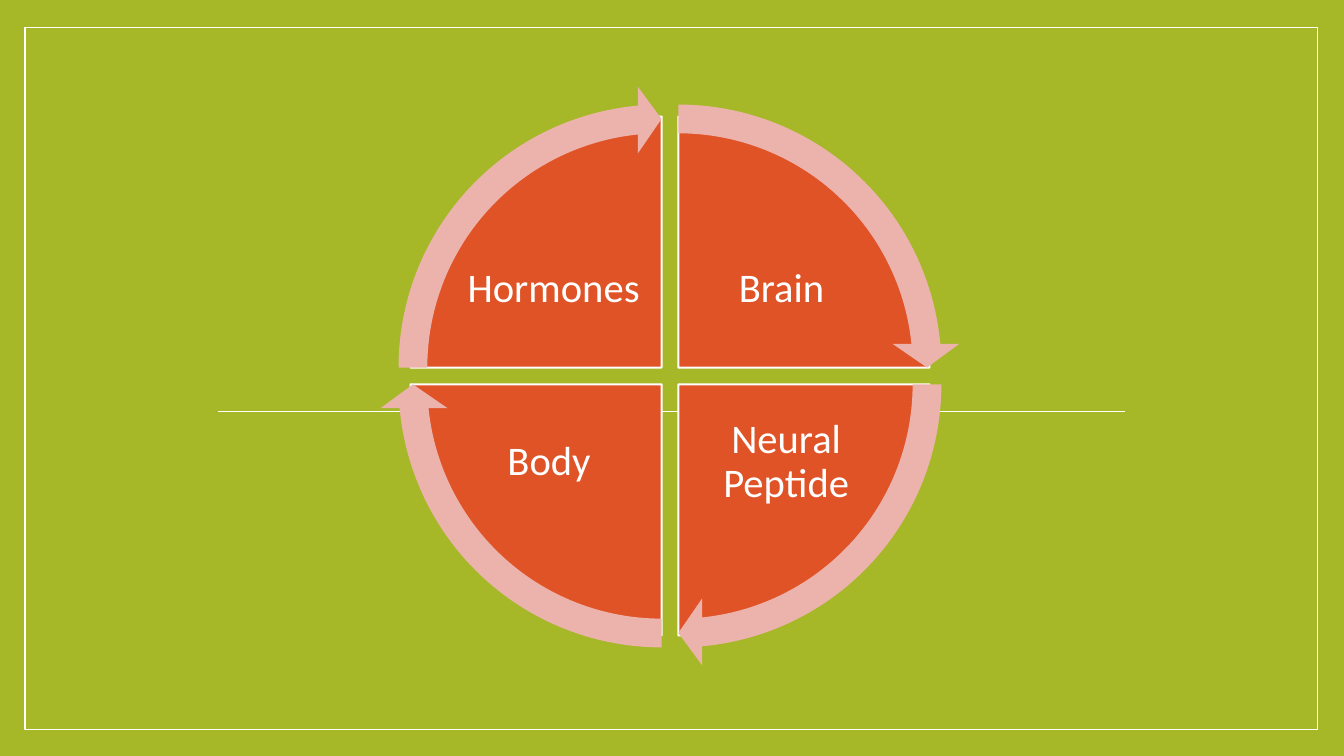
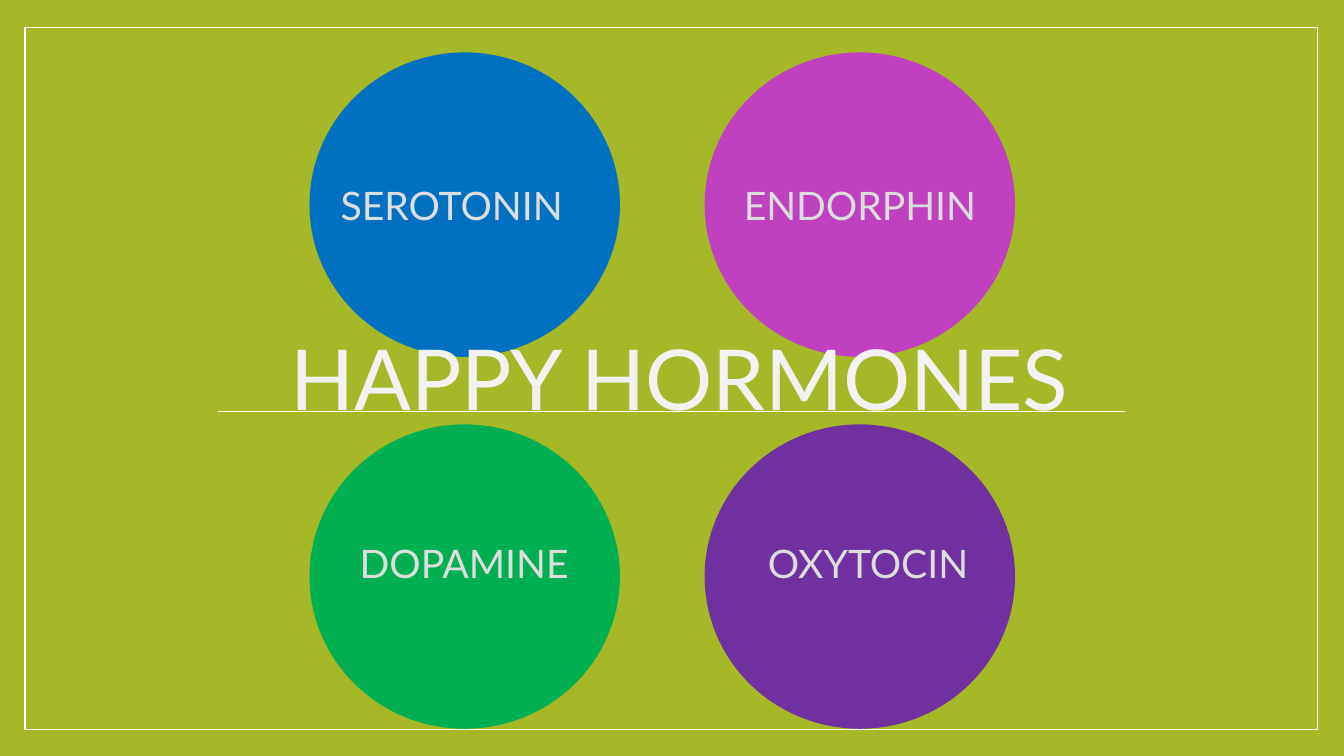
"""Build two slides: a four-part hormone cycle and the four happy hormones."""
import pptx
import pptx.util
import pptx.dml.color
import pptx.enum.shapes
import pptx.enum.text
import pptx.oxml.ns
import lxml.etree

SHAPE = pptx.enum.shapes.MSO_SHAPE
PP = pptx.enum.text.PP_ALIGN
ANCHOR = pptx.enum.text.MSO_ANCHOR
FIT = pptx.enum.text.MSO_AUTO_SIZE
RGB = pptx.dml.color.RGBColor.from_string
Pt = pptx.util.Pt

C = {
    "lime": "A6B727", "white": "FFFFFF", "orange": "DF5327", "pink": "ECB3AD",
    "blue": "0070C0", "magenta": "BF41BF", "green": "00B050", "purple": "7030A0",
    "title": "F2F2F2", "label": "DDDDDD",
}

prs = pptx.Presentation()
prs.slide_width = pptx.util.Inches(13.333)
prs.slide_height = pptx.util.Inches(7.5)
CELL = prs.slide_width / 40


def shape(s, kind, x, y, w, h, fill, line=None, adj=()):
    sp = s.shapes.add_shape(kind, *(int(v * CELL) for v in (x, y, w, h)))
    sp.shadow.inherit = False
    sp.fill.solid()
    sp.fill.fore_color.rgb = RGB(C[fill])
    if line:
        sp.line.color.rgb = RGB(C["white"])
        sp.line.width = Pt(line)
    else:
        sp.line.fill.background()
    for i, v in enumerate(adj):
        sp.adjustments[i] = v


def text(s, x, y, w, h, words, color, font, frame, para):
    tf = s.shapes.add_textbox(*(int(v * CELL) for v in (x, y, w, h))).text_frame
    p = tf.paragraphs[0]
    r = p.add_run()
    r.text = words
    r.font.color.rgb = RGB(C[color])
    for obj, fmt in ((tf, frame), (p, para), (r.font, font)):
        for name, value in fmt.items():
            setattr(obj, name, value)


bg = prs.slide_master.background.fill
bg.solid()
bg.fore_color.rgb = RGB(C["lime"])

slides = [prs.slides.add_slide(prs.slide_layouts[6]) for _ in range(2)]
for s in slides:
    shape(s, SHAPE.RECTANGLE, 0.75, 0.81, 38.46, 20.91, "lime", 1)
    ln = s.shapes.add_connector(
        pptx.enum.shapes.MSO_CONNECTOR.STRAIGHT,
        *(int(v * CELL) for v in (6.48, 12.24, 33.48, 12.24)))
    ln.line.color.rgb = RGB(C["white"])
    ln.line.width = Pt(0.79)
    lxml.etree.SubElement(ln.element.spPr, pptx.oxml.ns.qn("a:effectLst"))

cycle, happy = slides

MID_X, MID_Y, GAP = 19.94, 11.19, 0.25
PIE, ARROW = 14.94, 16.78
TEXT_W, TEXT_H = 5.52, 4.08
QUARTER, HEAD = 54, 3.275
inset = pptx.util.Inches(0.04)
cycle_frame = {
    "word_wrap": True, "vertical_anchor": ANCHOR.MIDDLE,
    "margin_left": inset, "margin_right": inset,
    "margin_top": inset, "margin_bottom": inset,
}
cycle_para = {"alignment": PP.CENTER, "line_spacing": 0.9}
cycle_font = {"size": Pt(29), "name": "Calibri"}

parts = [
    ("Brain ", 1, -1, 3),
    ("Neural Peptide", 1, 1, 0),
    ("Body ", -1, 1, 1),
    ("Hormones", -1, -1, 2),
]
for words, dx, dy, turn in parts:
    start, end = turn * QUARTER, (turn + 1) % 4 * QUARTER
    shape(cycle, SHAPE.PIE, MID_X + dx * GAP - PIE / 2, MID_Y + dy * GAP - PIE / 2,
          PIE, PIE, "orange", 1.5, (start, end))
    text(cycle, MID_X + dx * 3.46 - TEXT_W / 2, MID_Y + dy * 2.58 - TEXT_H / 2,
         TEXT_W, TEXT_H, words, "white", cycle_font, cycle_frame, cycle_para)
for words, dx, dy, turn in parts:
    start = turn * QUARTER
    shape(cycle, SHAPE.CIRCULAR_ARROW,
          MID_X + dx * GAP - ARROW / 2, MID_Y + dy * GAP - ARROW / 2,
          ARROW, ARROW, "pink",
          adj=(0.051, HEAD, start + QUARTER - HEAD, start, 0.059))

for i, fill in enumerate(("blue", "magenta", "green", "purple")):
    row, col = divmod(i, 2)
    shape(happy, SHAPE.OVAL, 9.21 + col * 11.76, 1.56 + row * 11.07, 9.24, 9.06, fill)

happy_frame = {"word_wrap": True, "auto_size": FIT.SHAPE_TO_FIT_TEXT}
for words, x, y, w, h, size, color in [
    ("HAPPY HORMONES", 8.34, 9.57, 25.26, 3.33, 60, "title"),
    ("SEROTONIN", 9.84, 5.25, 7.95, 1.71, 28, "label"),
    ("ENDORPHIN", 21.84, 5.25, 10.53, 1.71, 28, "label"),
    ("DOPAMINE", 10.41, 15.9, 10.32, 1.71, 28, "label"),
    ("OXYTOCIN", 22.56, 15.9, 8.64, 1.71, 28, "label"),
]:
    text(happy, x, y, w, h, words, color, {"size": Pt(size), "name": "Lato"},
         happy_frame, {"alignment": PP.LEFT})

prs.save("out.pptx")
